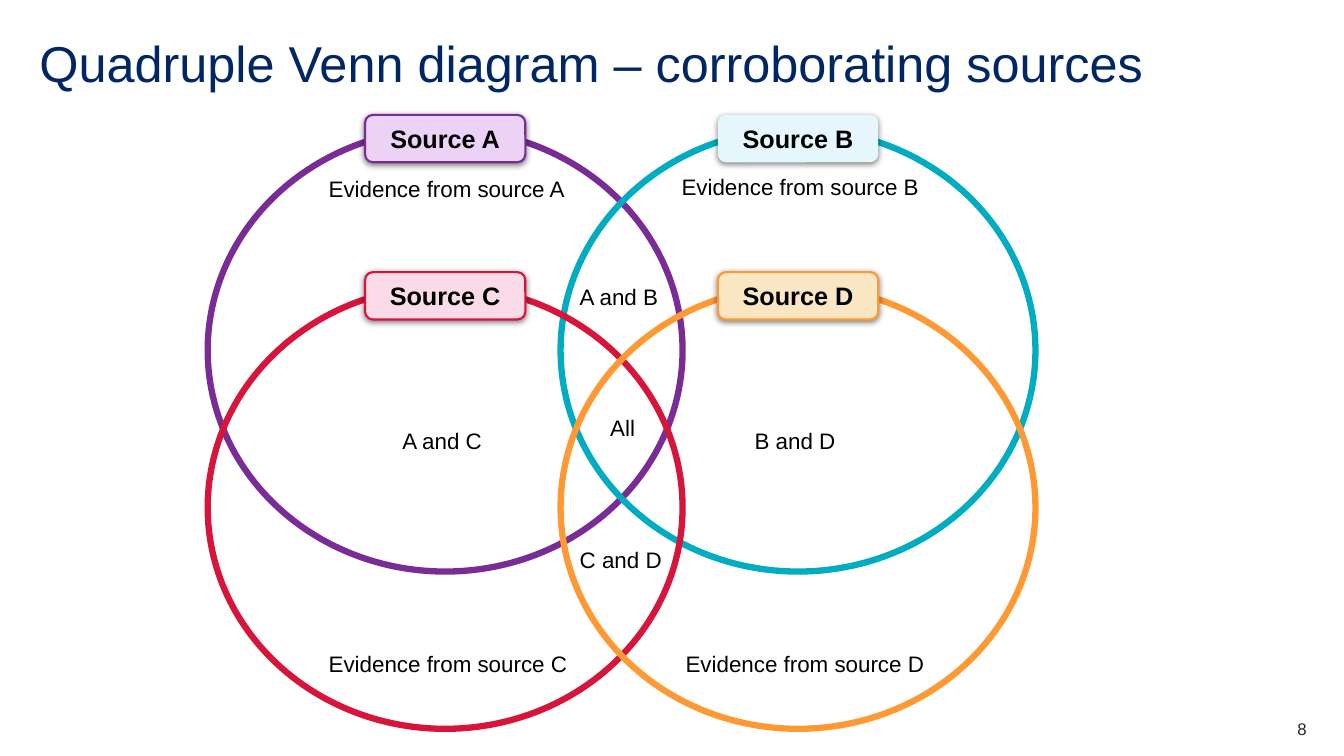
"""Build a four-circle Venn diagram slide about corroborating sources."""
from lxml import etree
from pptx import Presentation
from pptx.dml.color import RGBColor
from pptx.enum.shapes import MSO_SHAPE
from pptx.enum.text import MSO_ANCHOR, PP_ALIGN
from pptx.oxml import parse_xml
from pptx.oxml.ns import nsdecls
from pptx.util import Inches, Pt

OVAL, ROUNDED = MSO_SHAPE.OVAL, MSO_SHAPE.ROUNDED_RECTANGLE
TOP, MIDDLE = MSO_ANCHOR.TOP, MSO_ANCHOR.MIDDLE
LEFT, CENTER, RIGHT = PP_ALIGN.LEFT, PP_ALIGN.CENTER, PP_ALIGN.RIGHT

NAVY = RGBColor(0x00, 0x26, 0x64)
BLACK = RGBColor(0x00, 0x00, 0x00)
CHARCOAL = RGBColor(0x22, 0x27, 0x2B)
PURPLE, LILAC = RGBColor(0x79, 0x2C, 0x96), RGBColor(0xEC, 0xD3, 0xF5)
TEAL, ICE = RGBColor(0x00, 0xAC, 0xC2), RGBColor(0xE5, 0xF7, 0xFC)
RED, PINK = RGBColor(0xD7, 0x15, 0x3A), RGBColor(0xFB, 0xDB, 0xE7)
ORANGE, CREAM = RGBColor(0xFF, 0x99, 0x33), RGBColor(0xFA, 0xE6, 0xC2)

COLUMNS = (2.06, 5.56)
ROWS = (1.28, 2.84)
CIRCLE_WIDTH, CIRCLE_HEIGHT = 4.71, 4.39
BADGE_WIDTH, BADGE_HEIGHT, BADGE_RISE = 1.59, 0.47, 0.14
LABEL_HEIGHT = 0.53

SHADOW = (
    f'<a:effectLst {nsdecls("a")}><a:outerShdw blurRad="{Pt(4.5)}" dist="{Pt(1.5)}" '
    'dir="5400000" algn="t" rotWithShape="0"><a:srgbClr val="000000">'
    '<a:alpha val="50000"/></a:srgbClr></a:outerShdw></a:effectLst>'
)


def write(box, text, size, color, align=LEFT, anchor=TOP, inset=0.0, bold=False):
    frame = box.text_frame
    frame.text = text
    frame.word_wrap = True
    frame.vertical_anchor = anchor
    frame.margin_left = frame.margin_right = Inches(inset)
    frame.margin_top = frame.margin_bottom = Inches(inset)
    para = frame.paragraphs[0]
    para.alignment = align
    font = para.runs[0].font
    font.name, font.size, font.bold = "Arial", Pt(size), bold
    font.color.rgb = color
    return para


def add_label(text, left, top, width, align):
    box = page.shapes.add_textbox(
        Inches(left), Inches(top), Inches(width), Inches(LABEL_HEIGHT))
    para = write(box, text, 16, BLACK, align, inset=0.13)
    para.line_spacing = 1.14
    para.space_after = Pt(12)


deck = Presentation()
deck.slide_width, deck.slide_height = Inches(13.33), Inches(7.5)
page = deck.slides.add_slide(deck.slide_layouts[5])

title = page.shapes.title
title.left, title.top = Inches(0.39), Inches(0.39)
title.width, title.height = Inches(12.56), Inches(0.6)
heading = write(title, "Quadruple Venn diagram – corroborating sources", 36, NAVY)
heading.line_spacing = 0.9

sources = [
    ("A", 0, 0, PURPLE, LILAC, PURPLE, 3.13, 1.57),
    ("B", 1, 0, TEAL, ICE, None, 6.63, 1.55),
    ("C", 0, 1, RED, PINK, RED, 3.13, 6.28),
    ("D", 1, 1, ORANGE, CREAM, ORANGE, 6.67, 6.28),
]
for letter, column, row, ring, tint, border, text_left, text_top in sources:
    left, top = COLUMNS[column], ROWS[row]
    circle = page.shapes.add_shape(
        OVAL, Inches(left), Inches(top), Inches(CIRCLE_WIDTH), Inches(CIRCLE_HEIGHT))
    circle.shadow.inherit = False
    circle.fill.background()
    circle.line.color.rgb = ring
    circle.line.width = Pt(4.5)

    badge = page.shapes.add_shape(
        ROUNDED, Inches(left + (CIRCLE_WIDTH - BADGE_WIDTH) / 2),
        Inches(top - BADGE_RISE), Inches(BADGE_WIDTH), Inches(BADGE_HEIGHT))
    badge.fill.solid()
    badge.fill.fore_color.rgb = tint
    if border is None:
        badge.line.fill.background()
    else:
        badge.line.color.rgb = border
        badge.line.width = Pt(1.5)
    badge.element.spPr.append(parse_xml(SHADOW))
    write(badge, f"Source {letter}", 18, BLACK, CENTER, MIDDLE, 0.05, True)

    add_label(f"Evidence from source {letter}", text_left, text_top, 2.71, LEFT)

overlaps = [
    ("A and B", 5.62, 2.64, LEFT),
    ("A and C", 3.81, 4.07, CENTER),
    ("B and D", 7.31, 4.07, CENTER),
    ("C and D", 5.62, 5.25, LEFT),
    ("All", 5.6, 3.94, CENTER),
]
for text, left, top, align in overlaps:
    add_label(text, left, top, 1.15, align)

number = page.shapes.add_textbox(Inches(12.17), Inches(7.13), Inches(0.79), Inches(0.2))
write(number, "8", 12, CHARCOAL, RIGHT)

deck.save("out.pptx")
